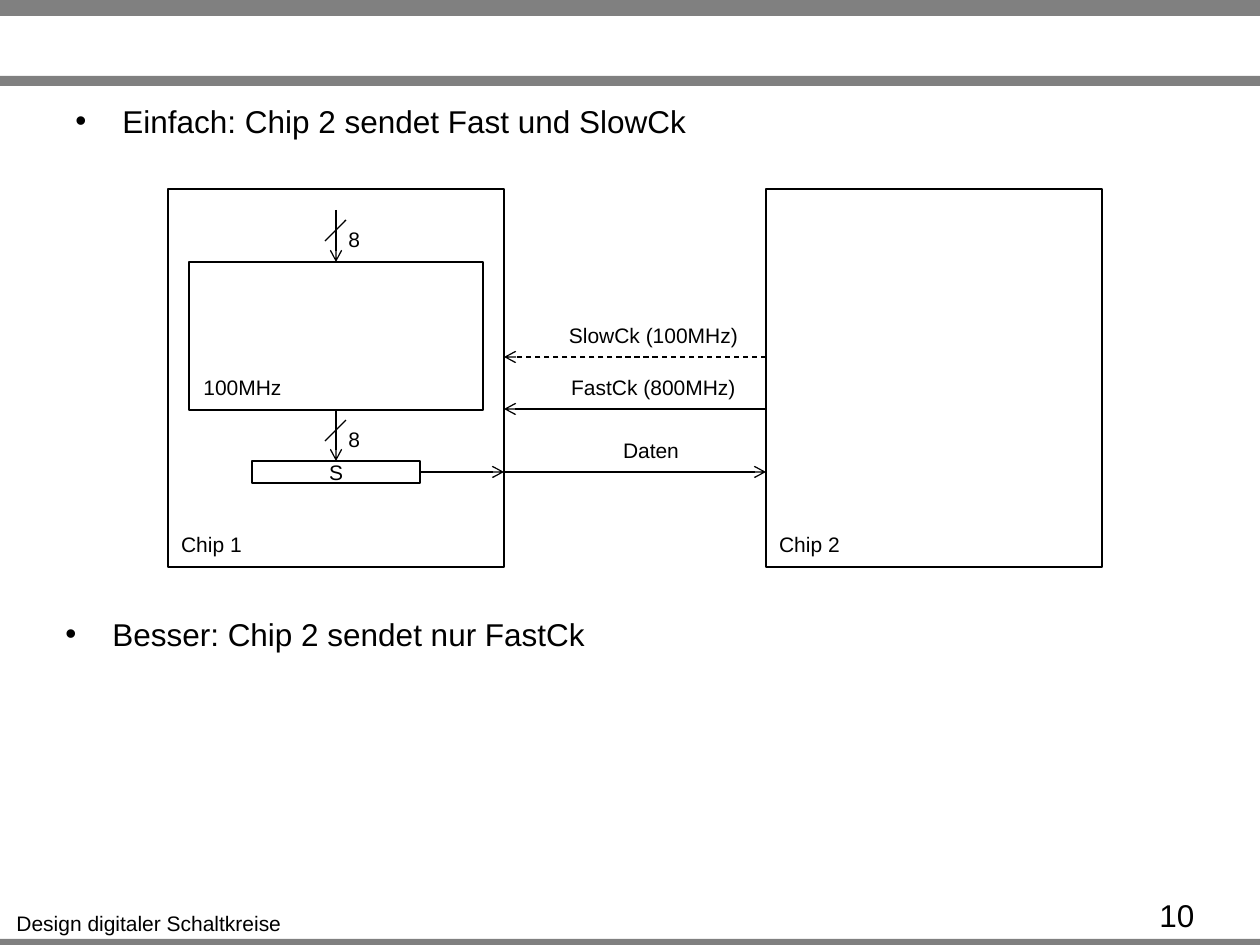
from pptx import Presentation
from pptx.dml.color import RGBColor as RGB
from pptx.enum.dml import MSO_LINE as Dash
from pptx.enum.shapes import MSO_CONNECTOR as Conn, MSO_SHAPE as Shape
from pptx.enum.text import MSO_ANCHOR as Anchor, PP_ALIGN as Align
from pptx.oxml.ns import qn
from pptx.util import Pt
from lxml.etree import SubElement as sub

PX = 914400 / 126  # EMU in one px
BLACK, GREY = "000000", "808080"
TOP, LEFT, BOTTOM, RIGHT = range(4)


def px(*nums):
    return [round(n * PX) for n in nums]


def color(code):
    return RGB.from_string(code)


def style(obj, **vals):
    for key, val in vals.items():
        setattr(obj, key, val)


def write(frame, text, size=12, align=Align.CENTER):
    para = frame.paragraphs[0]
    para.text = text
    para.alignment = align
    style(para.font, size=Pt(size), name="Arial")
    para.font.color.rgb = color(BLACK)


def label(slide, text, x, y, w, h=38, size=12, align=Align.CENTER, wrap=False):
    box = slide.shapes.add_textbox(*px(x, y, w, h))
    box.text_frame.word_wrap = wrap
    write(box.text_frame, text, size, align)
    return box


def bullet(slide, text, x, y):
    box = label(slide, text, x, y, 1134, 125, 18, Align.LEFT, True)
    props = box.text_frame.paragraphs[0]._p.get_or_add_pPr()
    ind = px(47)[0]
    props.set("marL", str(ind))
    props.set("indent", str(-ind))
    font = sub(props, qn("a:buFont"), typeface="Arial")
    mark = sub(props, qn("a:buChar"), char="•")
    # Bullet marks come before the default run format
    base = props.find(qn("a:defRPr"))
    if base is not None:
        base.addprevious(font)
        base.addprevious(mark)


def rect(slide, x, y, w, h, fill=None):
    box = slide.shapes.add_shape(Shape.RECTANGLE, *px(x, y, w, h))
    box.shadow.inherit = False
    if fill:
        box.fill.solid()
        box.fill.fore_color.rgb = color(fill)
        box.line.fill.background()
    else:
        box.fill.background()
        box.line.color.rgb = color(BLACK)
        box.line.width = Pt(0.75)
    return box


def line(slide, x1, y1, x2, y2, head=True, dash=None, start=None, end=None):
    conn = slide.shapes.add_connector(Conn.STRAIGHT, *px(x1, y1, x2, y2))
    conn.line.color.rgb = color(BLACK)
    style(conn.line, width=Pt(0.75), dash_style=dash)
    if head:
        sub(conn.line._get_or_add_ln(), qn("a:tailEnd"), type="arrow")
    sub(conn._element.spPr, qn("a:effectLst"))
    if start:
        conn.begin_connect(*start)
    if end:
        conn.end_connect(*end)


def bus(slide, x, y1, y2, **joins):
    """Down arrow with a slash and its width in bits."""
    line(slide, x, y1, x, y2, **joins)
    line(slide, x + 10, y1 + 10, x - 11, y1 + 31, head=False)
    label(slide, "8", x, y1 + 10, 36)


def main():
    prs = Presentation()
    prs.slide_width, prs.slide_height = px(1260, 945)
    slide = prs.slides.add_slide(prs.slide_layouts[6])

    # Page bars, footer and number
    for y, h in ((939, 10), (0, 16), (76, 10)):
        rect(slide, 0, y, 1260, h, GREY)
    label(slide, "Design digitaler Schaltkreise", 3, 904, 292)
    label(slide, "10", 1147, 890, 110, 30, 18, Align.LEFT, True)

    # Statements
    bullet(slide, "Einfach: Chip 2 sendet Fast und SlowCk", 63, 96)
    bullet(slide, "Besser: Chip 2 sendet nur FastCk", 53, 609)

    # Chips
    one, two, mid = 168, 766, 336
    edge = one + 336
    for name, x in (("Chip 1", one), ("Chip 2", two)):
        rect(slide, x, 189, 336, 378)
        label(slide, name, x, 525, 87)

    # Core and shift register in chip 1
    core = rect(slide, 189, 262, 294, 148)
    label(slide, "100MHz", 190, 368, 105)
    reg = rect(slide, 252, 461, 168, 22)
    style(reg.text_frame, vertical_anchor=Anchor.MIDDLE, margin_top=0,
          margin_bottom=0)
    write(reg.text_frame, "S")
    bus(slide, mid, 210, 262, end=(core, TOP))
    bus(slide, mid, 410, 461, start=(core, BOTTOM), end=(reg, TOP))
    line(slide, 420, 472, edge, 472, start=(reg, RIGHT))

    # Signals between the chips
    for text, x, w, y, src, dst, dash in (
        ("SlowCk (100MHz)", 556, 195, 357, two, edge, Dash.DASH),
        ("FastCk (800MHz)", 555, 197, 409, two, edge, None),
        ("Daten", 610, 82, 472, edge, two, None),
    ):
        line(slide, src, y, dst, y, dash=dash)
        label(slide, text, x, y - 41, w)

    prs.save("out.pptx")


if __name__ == "__main__":
    main()
